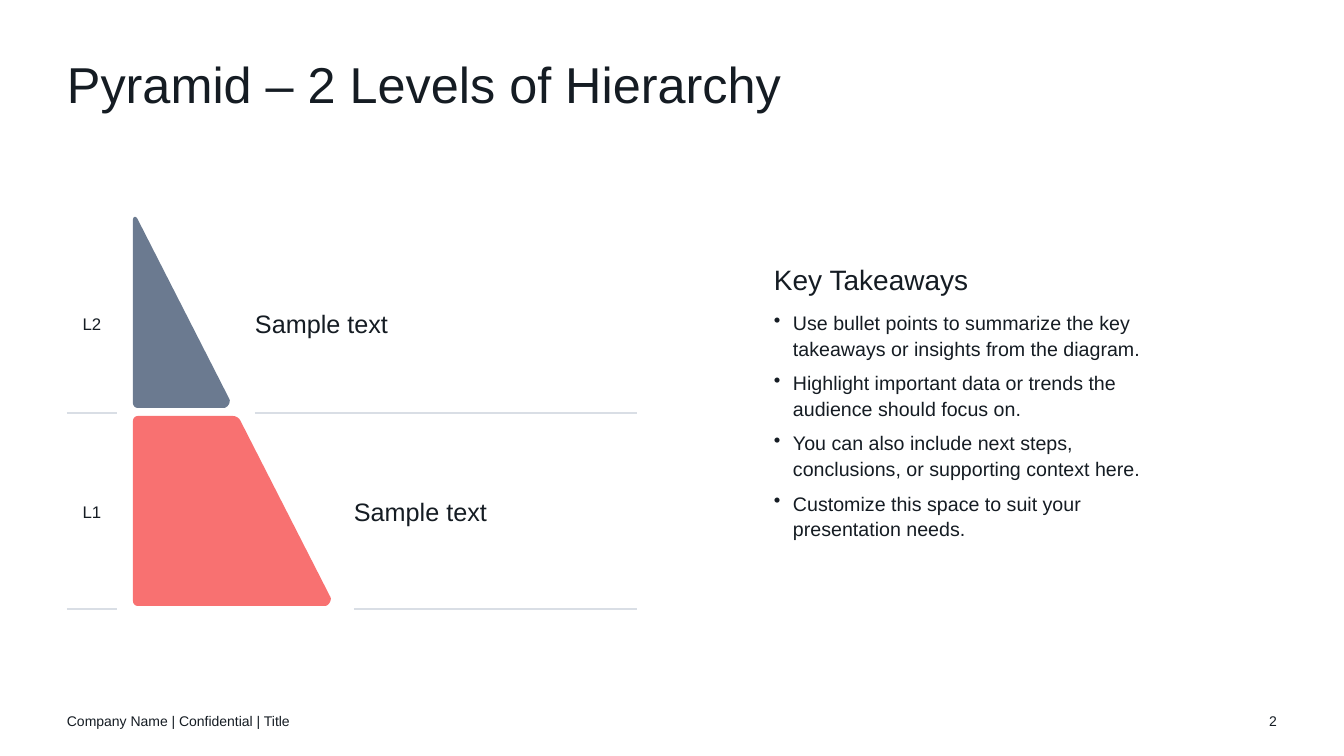
from lxml import etree
from pptx import Presentation
from pptx import util as u
from pptx.dml.color import RGBColor
from pptx.enum import shapes, text
from pptx.oxml.ns import qn

PX = 914400 / 100.8  # EMU per px
FONT = "Arial"
INK = RGBColor(0x15, 0x1C, 0x23)
RULE = RGBColor(0xD9, 0xDE, 0xE5)
SLATE = RGBColor(0x6B, 0x7A, 0x90)
CORAL = RGBColor(0xF8, 0x71, 0x71)
LEFT, MIDDLE, RIGHT_EDGE = 67, 133, 637

# Corner styles: radius in px, pull of the curve towards the corner
ROUND = (5, 0.55)
SHARP = (10, 0.35)

# Label, label top, text left, rule height, fill, corners
LEVELS = [
    ("L2", 308, 255, 413, SLATE,
     [(MIDDLE, 210, SHARP), (234, 408, SHARP), (MIDDLE, 408, ROUND)]),
    ("L1", 496, 354, 609, CORAL,
     [(MIDDLE, 416, ROUND), (238, 416, ROUND), (335, 606, SHARP),
      (MIDDLE, 606, ROUND)]),
]
TAKEAWAYS = [
    "Use bullet points to summarize the key takeaways or insights from the diagram.",
    "Highlight important data or trends the audience should focus on.",
    "You can also include next steps, conclusions, or supporting context here.",
    "Customize this space to suit your presentation needs.",
]


def emu(px):
    return u.Emu(round(px * PX))


def style(para, size):
    para.font.name = FONT
    para.font.size = u.Pt(size)
    para.font.color.rgb = INK


def add_text(page, words, left, top, width, height, size,
             align=text.PP_ALIGN.LEFT, anchor=text.MSO_ANCHOR.MIDDLE):
    box = page.shapes.add_textbox(emu(left), emu(top), emu(width), emu(height))
    frame = box.text_frame
    frame.word_wrap = True
    frame.vertical_anchor = anchor
    frame.margin_left = frame.margin_right = 0
    frame.margin_top = frame.margin_bottom = 0
    para = frame.paragraphs[0]
    para.text = words
    para.alignment = align
    style(para, size)
    return frame


def add_bullet(frame, words):
    para = frame.add_paragraph()
    para.text = words
    style(para, 14)
    props = para._p.get_or_add_pPr()
    props.set("marL", str(emu(19)))
    props.set("indent", str(-emu(19)))
    bullet = etree.Element(qn("a:buChar"), char="•")
    props.insert_element_before(bullet, "a:tabLst", "a:defRPr", "a:extLst")


def add_rule(page, start, end, y):
    rule = page.shapes.add_connector(
        shapes.MSO_CONNECTOR.STRAIGHT, emu(start), emu(y), emu(end), emu(y))
    rule.line.color.rgb = RULE
    rule.line.width = u.Pt(1)
    etree.SubElement(rule._element.spPr, qn("a:effectLst"))


def toward(start, end, distance):
    """Return the point at a distance from start on the way to end."""
    dx, dy = end[0] - start[0], end[1] - start[1]
    share = distance / (dx * dx + dy * dy) ** 0.5
    return start[0] + dx * share, start[1] + dy * share


def rounded_outline(corners, steps=8):
    points = []
    for i, (x, y, (radius, pull)) in enumerate(corners):
        corner = (x, y)
        before, after = corners[i - 1][:2], corners[(i + 1) % len(corners)][:2]
        handle = radius * (1 - pull)
        curve = [toward(corner, before, radius), toward(corner, before, handle),
                 toward(corner, after, handle), toward(corner, after, radius)]
        for step in range(steps + 1):
            t = step / steps
            weights = ((1 - t) ** 3, 3 * t * (1 - t) ** 2, 3 * t * t * (1 - t), t ** 3)
            points.append(tuple(
                emu(sum(w * p[axis] for w, p in zip(weights, curve)))
                for axis in (0, 1)))
    return points


def add_tier(page, corners, fill):
    points = rounded_outline(corners)
    builder = page.shapes.build_freeform(*points[0])
    builder.add_line_segments(points[1:], close=True)
    tier = builder.convert_to_shape()
    tier.shadow.inherit = False
    tier.fill.solid()
    tier.fill.fore_color.rgb = fill
    tier.line.fill.background()


def add_takeaways(page):
    frame = add_text(page, "Key Takeaways", 774, 181, 402, 438, 20)
    for words in TAKEAWAYS:
        add_bullet(frame, words)
    for para in frame.paragraphs:
        para.line_spacing = 1.1
        para.space_before = u.Pt(6)
    frame.paragraphs[0].space_after = u.Pt(3)


def main():
    deck = Presentation()
    deck.slide_width, deck.slide_height = emu(1344), emu(756)
    page = deck.slides.add_slide(deck.slide_layouts[6])

    # Title
    title = add_text(page, "Pyramid – 2 Levels of Hierarchy", LEFT, 60, 1210, 60,
                     36, anchor=text.MSO_ANCHOR.TOP)
    title.paragraphs[0].line_spacing = 0.9

    # Pyramid levels
    for label, top, text_left, rule_y, fill, corners in LEVELS:
        add_rule(page, LEFT, 117, rule_y)
        add_rule(page, text_left, RIGHT_EDGE, rule_y)
        add_text(page, label, 72, top, 40, 31, 12, text.PP_ALIGN.CENTER)
        add_text(page, "Sample text", text_left, top, 282, 31, 18)
        add_tier(page, corners, fill)

    add_takeaways(page)

    # Footer
    add_text(page, "Company Name | Confidential | Title", LEFT, 701, 454, 40, 10)
    add_text(page, "2", 1227, 701, 50, 40, 10, text.PP_ALIGN.RIGHT)

    deck.save("out.pptx")


if __name__ == "__main__":
    main()
